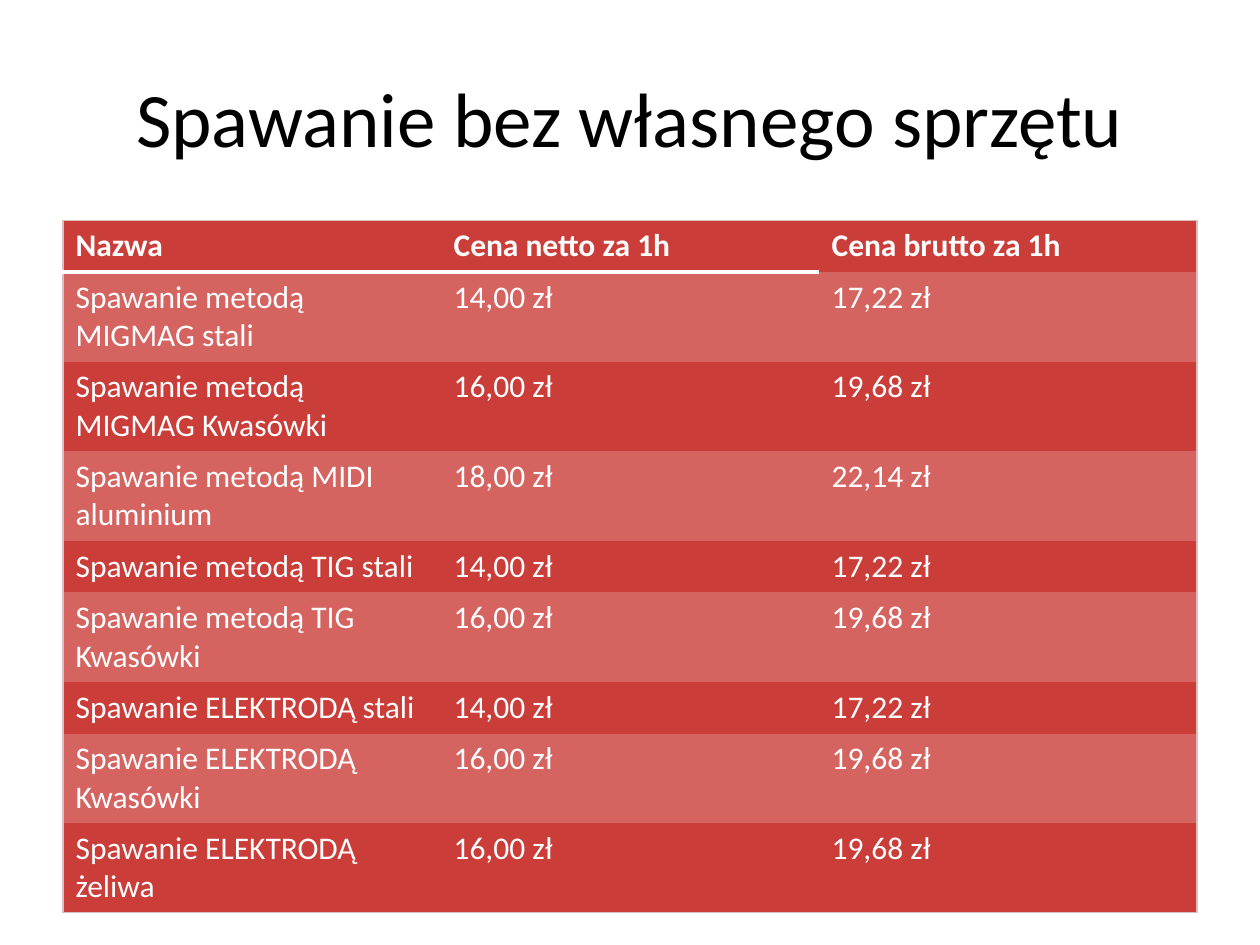
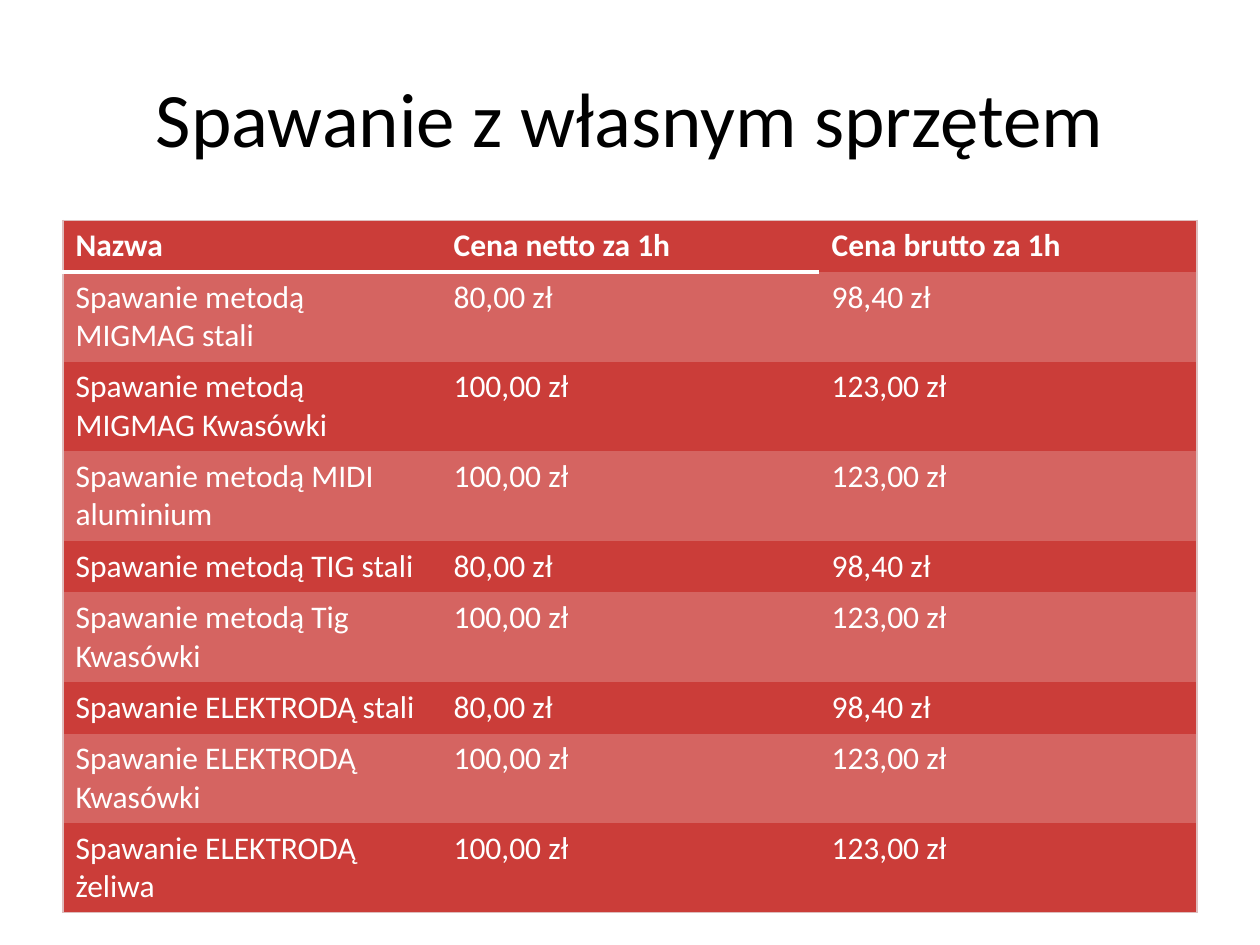
"""Build two slides with hourly welding price tables."""
import dataclasses

import lxml.etree
import pptx
import pptx.dml.color
import pptx.enum.text
import pptx.oxml.ns
import pptx.util

Inches = pptx.util.Inches
NO_STYLE_NO_GRID = "{2D5ABB26-0587-4C30-8999-92F81FD0307C}"
VAT_RATE = 0.23
HEADER = ("Nazwa", "Cena netto za 1h", "Cena brutto za 1h")
PRICE_LISTS = {
    "Spawanie bez własnego sprzętu": (
        ("Spawanie metodą MIGMAG stali", 14),
        ("Spawanie metodą MIGMAG Kwasówki", 16),
        ("Spawanie metodą MIDI aluminium", 18),
        ("Spawanie metodą TIG stali", 14),
        ("Spawanie metodą TIG Kwasówki", 16),
        ("Spawanie ELEKTRODĄ stali", 14),
        ("Spawanie ELEKTRODĄ Kwasówki", 16),
        ("Spawanie ELEKTRODĄ żeliwa", 16),
    ),
    "Spawanie z własnym sprzętem": (
        ("Spawanie metodą MIGMAG stali", 80),
        ("Spawanie metodą MIGMAG Kwasówki", 100),
        ("Spawanie metodą MIDI aluminium", 100),
        ("Spawanie metodą TIG stali", 80),
        ("Spawanie metodą Tig Kwasówki", 100),
        ("Spawanie ELEKTRODĄ stali", 80),
        ("Spawanie ELEKTRODĄ Kwasówki", 100),
        ("Spawanie ELEKTRODĄ żeliwa", 100),
    ),
}


@dataclasses.dataclass(frozen=True)
class Theme:
    font: str = "Calibri"
    title_size: int = 44
    table_size: int = 18
    title_color: str = "000000"
    table_text: str = "FFFFFF"
    dark_band: str = "CB3D39"
    light_band: str = "D56461"
    frame: str = "DEBDBD"
    header_rule: str = "FFFFFF"
    frame_width: float = 0.75
    rule_width: float = 3


class Deck:
    def __init__(self, theme):
        self.theme = theme
        self.presentation = pptx.Presentation()
        self.presentation.slide_width = Inches(10)
        self.presentation.slide_height = Inches(7.5)
        self.slide = None

    def add_slide(self, title):
        self.slide = self.presentation.slides.add_slide(self.presentation.slide_layouts[5])
        shape = self.slide.shapes.title
        shape.left, shape.top = Inches(0.5), Inches(0.3)
        shape.width, shape.height = Inches(9), Inches(1.25)
        shape.text_frame.text = title
        shape.text_frame.vertical_anchor = pptx.enum.text.MSO_ANCHOR.MIDDLE
        paragraph = shape.text_frame.paragraphs[0]
        paragraph.alignment = pptx.enum.text.PP_ALIGN.CENTER
        self.set_font(paragraph, self.theme.title_size, self.theme.title_color)

    def set_font(self, paragraph, size, color, bold=False):
        font = paragraph.font
        font.name, font.size, font.bold = self.theme.font, pptx.util.Pt(size), bold
        font.color.rgb = pptx.dml.color.RGBColor.from_string(color)

    def add_border(self, cell, side, color, width):
        qualify = pptx.oxml.ns.qn
        properties = cell._tc.get_or_add_tcPr()
        line = lxml.etree.SubElement(
            properties, qualify(f"a:ln{side}"), w=str(int(pptx.util.Pt(width))))
        fill = lxml.etree.SubElement(line, qualify("a:solidFill"))
        lxml.etree.SubElement(fill, qualify("a:srgbClr"), val=color)

    def add_borders(self, cell, row, column, last_row, last_column):
        theme = self.theme
        frame_edges = {
            "L": column == 0,
            "R": column == last_column,
            "T": row == 0,
            "B": row == last_row,
        }
        for side, on_frame in frame_edges.items():
            if on_frame:
                self.add_border(cell, side, theme.frame, theme.frame_width)
        if row == 0 and column < last_column:
            self.add_border(cell, "B", theme.header_rule, theme.rule_width)

    def add_table(self, rows):
        theme = self.theme
        row_height = Inches(0.41)
        table = self.slide.shapes.add_table(
            len(rows), len(rows[0]), Inches(0.5), Inches(1.75),
            Inches(9), row_height * len(rows)).table
        table._tbl.tblPr.find(pptx.oxml.ns.qn("a:tableStyleId")).text = NO_STYLE_NO_GRID
        for row, texts in enumerate(rows):
            table.rows[row].height = row_height
            band = theme.light_band if row % 2 else theme.dark_band
            for column, text in enumerate(texts):
                cell = table.cell(row, column)
                cell.text = text
                self.set_font(cell.text_frame.paragraphs[0], theme.table_size,
                              theme.table_text, bold=row == 0)
                self.add_borders(cell, row, column, len(rows) - 1, len(texts) - 1)
                cell.fill.solid()
                cell.fill.fore_color.rgb = pptx.dml.color.RGBColor.from_string(band)


def format_price(amount):
    return f"{amount:.2f} zł".replace(".", ",")


def main():
    deck = Deck(Theme())
    for title, services in PRICE_LISTS.items():
        deck.add_slide(title)
        deck.add_table([HEADER] + [
            (name, format_price(net), format_price(net * (1 + VAT_RATE)))
            for name, net in services])
    deck.presentation.save("out.pptx")


if __name__ == "__main__":
    main()
